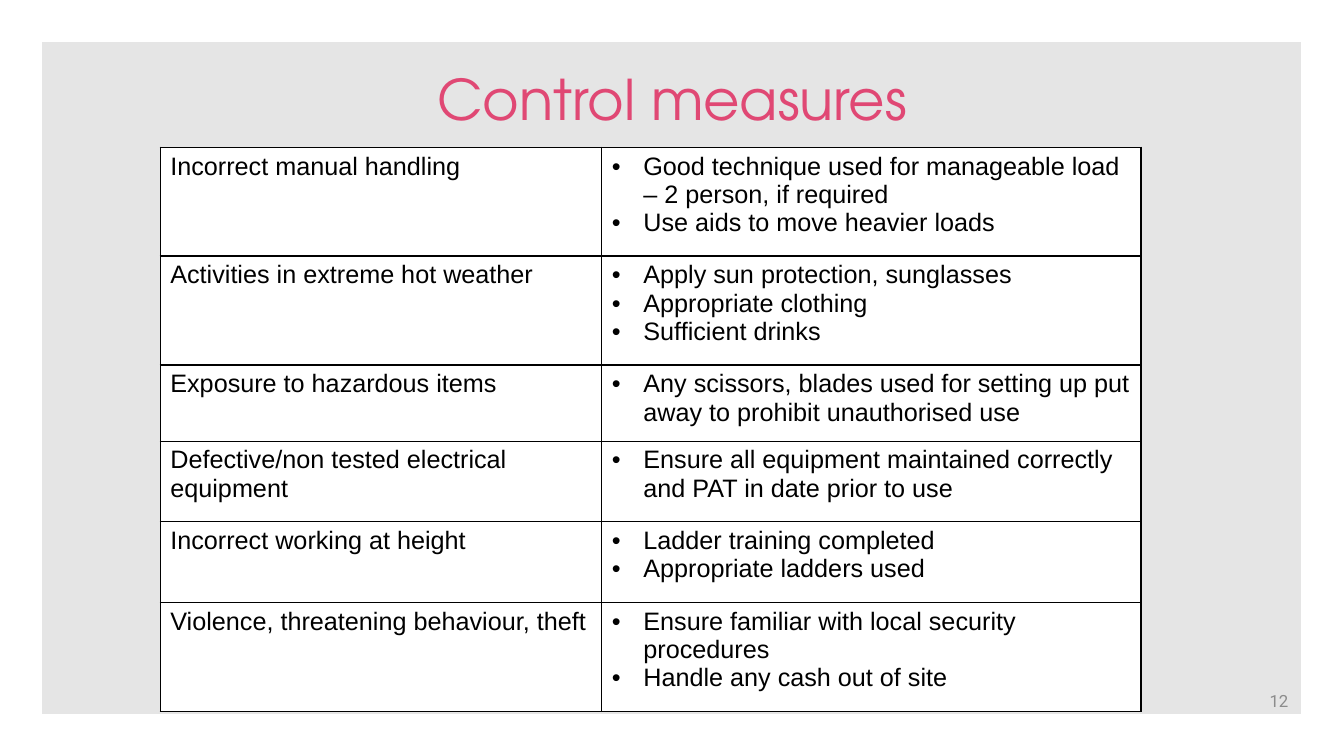
from lxml.etree import SubElement
from pptx import Presentation
from pptx.dml.color import RGBColor
from pptx.enum.shapes import MSO_SHAPE as Shape
from pptx.enum.text import MSO_ANCHOR as Anchor, PP_ALIGN as Align
from pptx.oxml.ns import qn
from pptx.util import Pt

MEASURES = [
    ("Incorrect manual handling",
     ["Good technique used for manageable load – 2 person, if required",
      "Use aids to move heavier loads"]),
    ("Activities in extreme hot weather",
     ["Apply sun protection, sunglasses", "Appropriate clothing", "Sufficient drinks"]),
    ("Exposure to hazardous items",
     ["Any scissors, blades used for setting up put away to prohibit unauthorised use"]),
    ("Defective/non tested electrical equipment",
     ["Ensure all equipment maintained correctly and PAT in date prior to use"]),
    ("Incorrect working at height",
     ["Ladder training completed", "Appropriate ladders used"]),
    ("Violence, threatening behaviour, theft",
     ["Ensure familiar with local security procedures", "Handle any cash out of site"]),
]
COLUMN_WIDTHS = [315.4, 385.2]
ROW_HEIGHTS = [77.8, 77.8, 54.4, 57.7, 57.7, 77.8]


def colour(hex_code):
    return RGBColor.from_string(hex_code)


class SlideBuilder:
    BLACK, WHITE, PINK, GREY = "000000", "FFFFFF", "E04874", "8C8C8C"
    TITLE_FONT, BODY_FONT, NUMBER_FONT = "TeX Gyre Adventor", "Arial", "Roboto"
    BULLET_INDENT = 22.5

    def __init__(self, slide):
        self.slide = slide

    def format_text(self, paragraph, font, size, hex_code, align=Align.LEFT):
        paragraph.alignment = align
        for run in paragraph.runs:
            run.font.name = font
            run.font.size = Pt(size)
            run.font.color.rgb = colour(hex_code)

    def panel(self, left, top, width, height):
        panel = self.slide.shapes.add_shape(
            Shape.RECTANGLE, Pt(left), Pt(top), Pt(width), Pt(height))
        panel.shadow.inherit = False
        panel.fill.solid()
        panel.fill.fore_color.rgb = colour(self.BLACK)
        tint = panel.element.spPr.find(qn("a:solidFill"))[0]
        SubElement(tint, qn("a:alpha"), val="10000")
        panel.line.color.rgb = colour(self.WHITE)
        panel.line.width = Pt(10)

    def page_number(self, text, left, top, width, height):
        number = self.slide.shapes.add_textbox(Pt(left), Pt(top), Pt(width), Pt(height))
        frame = number.text_frame
        frame.word_wrap = True
        frame.vertical_anchor = Anchor.MIDDLE
        frame.text = text
        self.format_text(frame.paragraphs[0], self.NUMBER_FONT, 12, self.GREY, Align.RIGHT)

    def title(self, text, left, top, width, height):
        title = self.slide.shapes.title
        title.left, title.top = Pt(left), Pt(top)
        title.width, title.height = Pt(width), Pt(height)
        frame = title.text_frame
        frame.text = text
        frame.vertical_anchor = Anchor.MIDDLE
        heading = frame.paragraphs[0]
        heading.line_spacing = 0.9
        self.format_text(heading, self.TITLE_FONT, 40, self.PINK, Align.CENTER)
        # Bring the title in front of the panel
        title.element.getparent().append(title.element)

    def bullet(self, paragraph):
        props = paragraph._p.get_or_add_pPr()
        props.set("marL", str(Pt(self.BULLET_INDENT)))
        props.set("indent", str(-Pt(self.BULLET_INDENT)))
        SubElement(props, qn("a:buFont"), typeface=self.BODY_FONT)
        SubElement(props, qn("a:buChar"), char="•")

    def cell(self, cell, lines, bulleted):
        # Borders come before the fill in the cell properties
        props = cell._tc.get_or_add_tcPr()
        for side in ("lnL", "lnR", "lnT", "lnB"):
            border = SubElement(props, qn(f"a:{side}"), w=str(Pt(1)))
            SubElement(SubElement(border, qn("a:solidFill")), qn("a:srgbClr"), val=self.BLACK)
        cell.fill.solid()
        cell.fill.fore_color.rgb = colour(self.WHITE)
        cell.margin_left = cell.margin_right = Pt(7.2)
        cell.margin_top = cell.margin_bottom = Pt(3.6)
        cell.text_frame.text = "\n".join(lines)
        for paragraph in cell.text_frame.paragraphs:
            self.format_text(paragraph, self.BODY_FONT, 18, self.BLACK)
            if bulleted:
                self.bullet(paragraph)

    def table(self, rows, left, top, widths, heights):
        table = self.slide.shapes.add_table(
            len(rows), len(widths), Pt(left), Pt(top),
            Pt(sum(widths)), Pt(sum(heights))).table
        table.first_row = table.horz_banding = False
        for column, width in zip(table.columns, widths):
            column.width = Pt(width)
        for row, height, (hazard, controls) in zip(table.rows, heights, rows):
            row.height = Pt(height)
            self.cell(row.cells[0], [hazard], bulleted=False)
            self.cell(row.cells[1], controls, bulleted=True)


def main():
    deck = Presentation()
    deck.slide_width, deck.slide_height = Pt(960), Pt(540)
    builder = SlideBuilder(deck.slides.add_slide(deck.slide_layouts[5]))

    # Background panel and page number
    builder.panel(25.2, 25.2, 909.4, 489.6)
    builder.page_number("12", 711.4, 486, 216, 28.8)

    # Hazards and their control measures
    builder.table(MEASURES, 114.5, 105.1, COLUMN_WIDTHS, ROW_HEIGHTS)

    # Heading
    builder.title("Control measures", 66.2, 20.9, 828, 104.4)

    deck.save("out.pptx")


if __name__ == "__main__":
    main()
